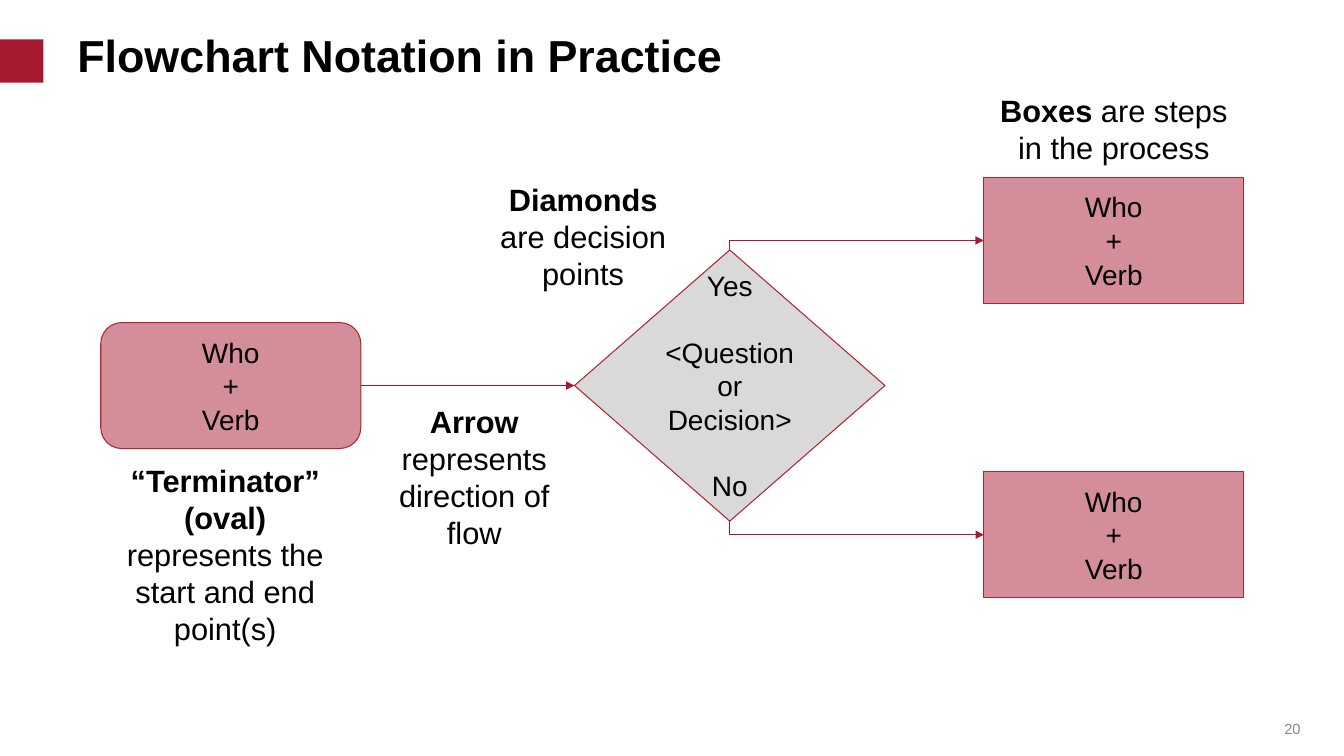
from lxml import etree
from pptx import Presentation, util as u
from pptx.dml.color import RGBColor
from pptx.enum import shapes, text
from pptx.oxml.ns import qn

COLORS = {
    "accent": "A71930",
    "outline": "AE2431",
    "decision": "D9D9D9",
    "ink": "000000",
    "page": "888888",
}
FONT = "Arial"
WIDTH, HEIGHT = u.Inches(13.33), u.Inches(7.5)
COLUMNS, ROWS = 40, 30
STEP_SIZE = (7.74, 5)
STEP_COLUMN = 29.28
STEP_ROWS = (7.04, 18.72)
STEP_WORDS = ("Who", "+", "Verb")
START = (3, 12.8)
DECISION = (17.1, 9.92, 9.24, 10.76)
CAPTIONS = [
    ((3.15, 18.12, 7.11, 7.8),
     [[("“Terminator” (oval)", True)],
      [("represents the start and end point(s)", False)]]),
    ((14.4, 6.96, 5.91, 4.84),
     [[("Diamonds ", True), ("are decision points", False)]]),
    ((29.28, 3.44, 7.74, 3.36),
     [[("Boxes ", True), ("are steps in the process", False)]]),
    ((11.37, 15.8, 5.49, 6.32),
     [[("Arrow", True)], [("represents direction of flow", False)]]),
]


def col(count):
    return round(WIDTH * count / COLUMNS)


def row(count):
    return round(HEIGHT * count / ROWS)


def place(area):
    left, top, width, height = area
    return col(left), row(top), col(width), row(height)


def color(name):
    return RGBColor.from_string(COLORS[name])


def write(frame, paragraphs, size, align, anchor, ink="ink", gap=0):
    frame.word_wrap = True
    frame.vertical_anchor = anchor
    for index, runs in enumerate(paragraphs):
        paragraph = frame.paragraphs[0] if index == 0 else frame.add_paragraph()
        paragraph.alignment = align
        if index:
            paragraph.space_before = u.Pt(gap)
        for words, bold in runs:
            run = paragraph.add_run()
            run.text = words
            run.font.name = FONT
            run.font.size = u.Pt(size)
            run.font.bold = bold
            run.font.color.rgb = color(ink)


def add_text(slide, area, paragraphs, size, align=text.PP_ALIGN.CENTER,
             anchor=text.MSO_ANCHOR.TOP, ink="ink"):
    frame = slide.shapes.add_textbox(*place(area)).text_frame
    write(frame, paragraphs, size, align, anchor, ink)
    return frame


def add_block(slide, kind, area, fill, outline=None, opacity=None):
    block = slide.shapes.add_shape(kind, *place(area))
    block.shadow.inherit = False
    block.fill.solid()
    block.fill.fore_color.rgb = color(fill)
    if opacity:
        tint = block.fill._xPr.find(qn("a:solidFill"))[0]
        etree.SubElement(tint, qn("a:alpha")).set("val", str(opacity * 1000))
    if outline:
        block.line.color.rgb = color(outline)
        block.line.width = u.Pt(0.75)
    else:
        block.line.fill.background()
    return block


def add_node(slide, kind, area, lines, fill, opacity=None, gap=0):
    node = add_block(slide, kind, area, fill, "outline", opacity)
    write(node.text_frame, [[(line, False)] for line in lines], 20,
          text.PP_ALIGN.CENTER, text.MSO_ANCHOR.MIDDLE, gap=gap)


def add_arrow(slide, kind, begin_x, begin_y, end_x, end_y):
    arrow = slide.shapes.add_connector(kind, begin_x, begin_y, end_x, end_y)
    arrow.line.color.rgb = color("accent")
    arrow.line.width = u.Pt(0.75)
    properties = arrow._element.spPr
    etree.SubElement(properties.find(qn("a:ln")), qn("a:tailEnd")).set("type", "triangle")
    etree.SubElement(properties, qn("a:effectLst"))
    return properties


def add_branch(slide, from_x, from_y, to_x, to_y):
    center_x, center_y = (from_x + to_x) // 2, (from_y + to_y) // 2
    half_rise, half_run = (from_y - to_y) // 2, (to_x - from_x) // 2
    properties = add_arrow(slide, shapes.MSO_CONNECTOR.ELBOW,
                           center_x - half_rise, center_y - half_run,
                           center_x + half_rise, center_y + half_run)
    properties.find(qn("a:xfrm")).set("rot", str(270 * 60000))
    properties.find(qn("a:prstGeom")).set("prst", "bentConnector2")


def main():
    deck = Presentation()
    deck.slide_width, deck.slide_height = WIDTH, HEIGHT
    slide = deck.slides.add_slide(deck.slide_layouts[6])

    add_block(slide, shapes.MSO_SHAPE.RECTANGLE, (0, 1.56, 1.29, 1.72), "accent")
    title = add_text(slide, (2.01, 1.08, 36, 2.36),
                     [[("Flowchart Notation in Practice", True)]], 32,
                     text.PP_ALIGN.LEFT, text.MSO_ANCHOR.BOTTOM)
    title.margin_top = 0

    left, top, width, height = DECISION
    add_node(slide, shapes.MSO_SHAPE.DIAMOND, DECISION,
             ("Yes", "<Question or Decision>", "No"), "decision", gap=23.5)

    middle_x, middle_y = left + width / 2, top + height / 2
    for step_row, tip in zip(STEP_ROWS, (top, top + height)):
        add_node(slide, shapes.MSO_SHAPE.RECTANGLE,
                 (STEP_COLUMN, step_row, *STEP_SIZE), STEP_WORDS, "accent", 49)
        add_branch(slide, col(middle_x), row(tip),
                   col(STEP_COLUMN), row(step_row + STEP_SIZE[1] / 2))

    add_node(slide, shapes.MSO_SHAPE.ROUNDED_RECTANGLE, (*START, *STEP_SIZE),
             STEP_WORDS, "accent", 49)
    add_arrow(slide, shapes.MSO_CONNECTOR.STRAIGHT,
              col(START[0] + STEP_SIZE[0]), row(START[1] + STEP_SIZE[1] / 2),
              col(left), row(middle_y))

    for area, paragraphs in CAPTIONS:
        add_text(slide, area, paragraphs, 22)
    add_text(slide, (36.75, 28.12, 2.25, 1.6), [[("20", False)]], 10.5,
             text.PP_ALIGN.RIGHT, text.MSO_ANCHOR.MIDDLE, "page")
    deck.save("out.pptx")


if __name__ == "__main__":
    main()
